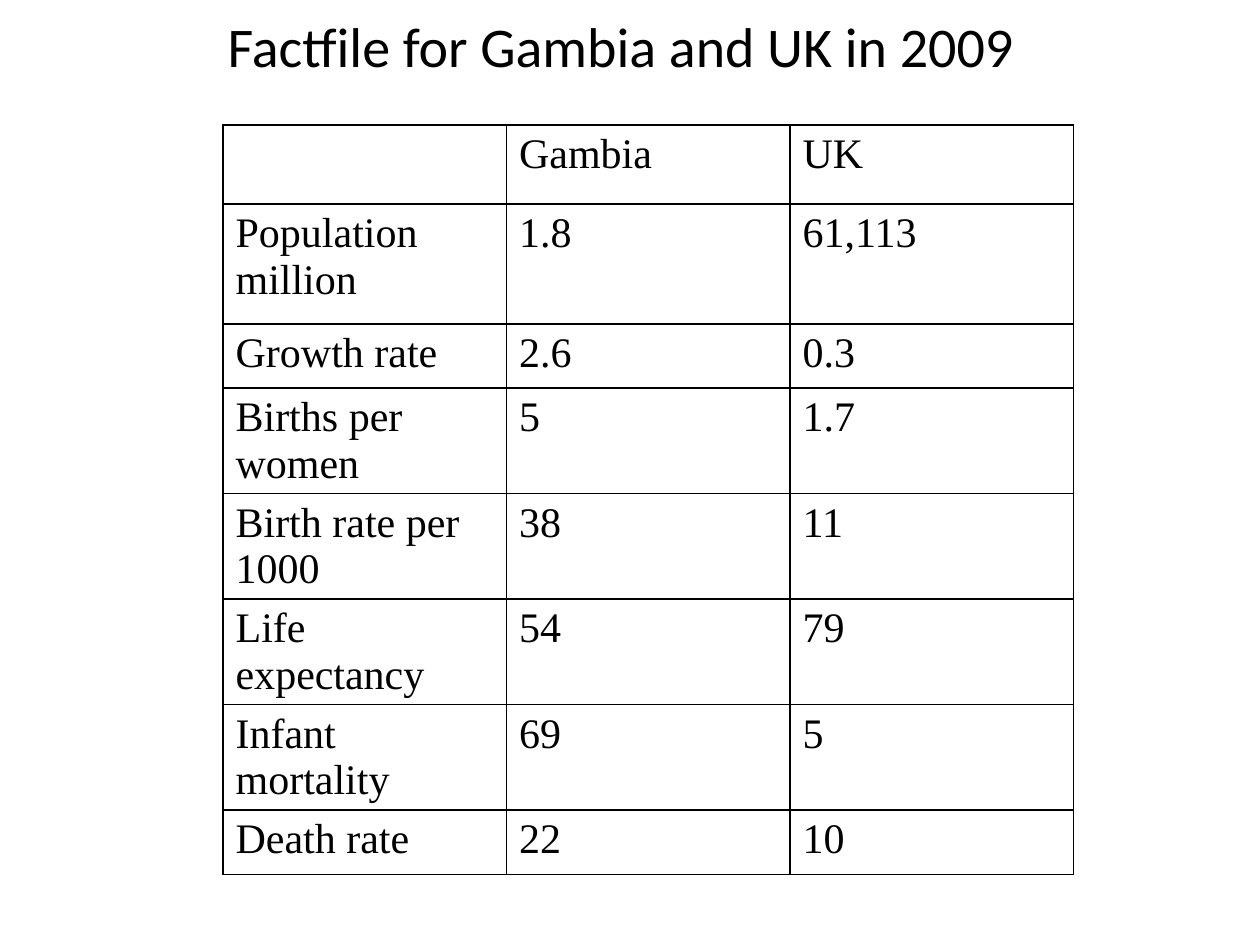
from dataclasses import dataclass

from lxml import etree
from pptx import Presentation
from pptx.dml.color import RGBColor
from pptx.enum import text as t
from pptx.oxml import ns
from pptx.util import Inches, Pt

BLACK = RGBColor(0, 0, 0)
SERIF = "Times New Roman"


@dataclass
class Fact:
    label: str
    gambia: str
    uk: str
    height: float = 0.51


FACTS = [
    Fact("", "Gambia", "UK", 0.63),
    Fact("Population million", "1.8", "61,113", 0.95),
    Fact("Growth rate", "2.6", "0.3"),
    Fact("Births per women", "5", "1.7"),
    Fact("Birth rate per 1000", "38", "11"),
    Fact("Life expectancy", "54", "79"),
    Fact("Infant mortality", "69", "5"),
    Fact("Death rate", "22", "10"),
]


def write(frame, words: str, *, size: float, font: str, color=BLACK,
          align=t.PP_ALIGN.LEFT) -> None:
    para = frame.paragraphs[0]
    para.alignment = align
    if not words:
        return
    run = para.add_run()
    run.text = words
    run.font.size = Pt(size)
    run.font.name = font
    run.font.color.rgb = color


def border(cell, width: float = 1, color: RGBColor = BLACK) -> None:
    props = cell._tc.get_or_add_tcPr()
    for side in ("a:lnL", "a:lnR", "a:lnT", "a:lnB"):
        line = etree.SubElement(props, ns.qn(side), w=str(Pt(width)))
        fill = etree.SubElement(line, ns.qn("a:solidFill"))
        etree.SubElement(fill, ns.qn("a:srgbClr"), val=str(color))


def draw_title(slide, words: str) -> None:
    title = slide.shapes.title
    title.left, title.top = Inches(0.43), Inches(-0.27)
    title.width, title.height = Inches(9), Inches(1.25)
    title.text_frame.vertical_anchor = t.MSO_ANCHOR.MIDDLE
    write(title.text_frame, words, size=32, font="Calibri",
          align=t.PP_ALIGN.CENTER)


def draw_table(slide, facts: list[Fact]) -> None:
    height = sum(fact.height for fact in facts)
    table = slide.shapes.add_table(
        len(facts), 3, Inches(1.77), Inches(0.99),
        Inches(6.75), Inches(height)).table
    table.first_row = table.horz_banding = False
    for row, fact in zip(table.rows, facts):
        row.height = Inches(fact.height)
        for cell, words in zip(row.cells, (fact.label, fact.gambia, fact.uk)):
            write(cell.text_frame, words, size=24, font=SERIF)
            border(cell)
            cell.fill.background()


def main() -> None:
    deck = Presentation()
    deck.slide_width, deck.slide_height = Inches(10), Inches(7.5)
    slide = deck.slides.add_slide(deck.slide_layouts[5])
    draw_title(slide, "Factfile for Gambia and UK in 2009")
    draw_table(slide, FACTS)
    deck.save("out.pptx")


if __name__ == "__main__":
    main()
